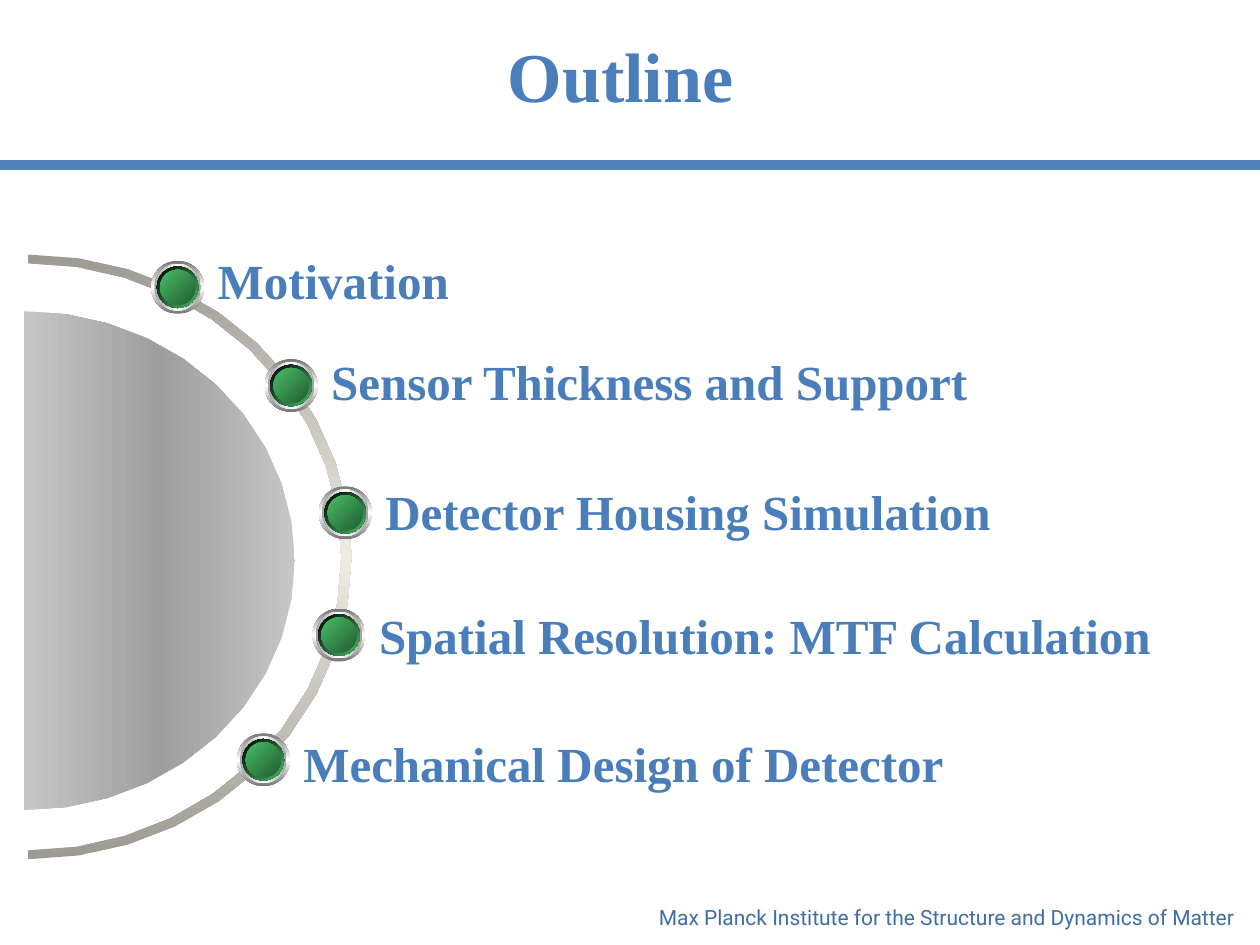
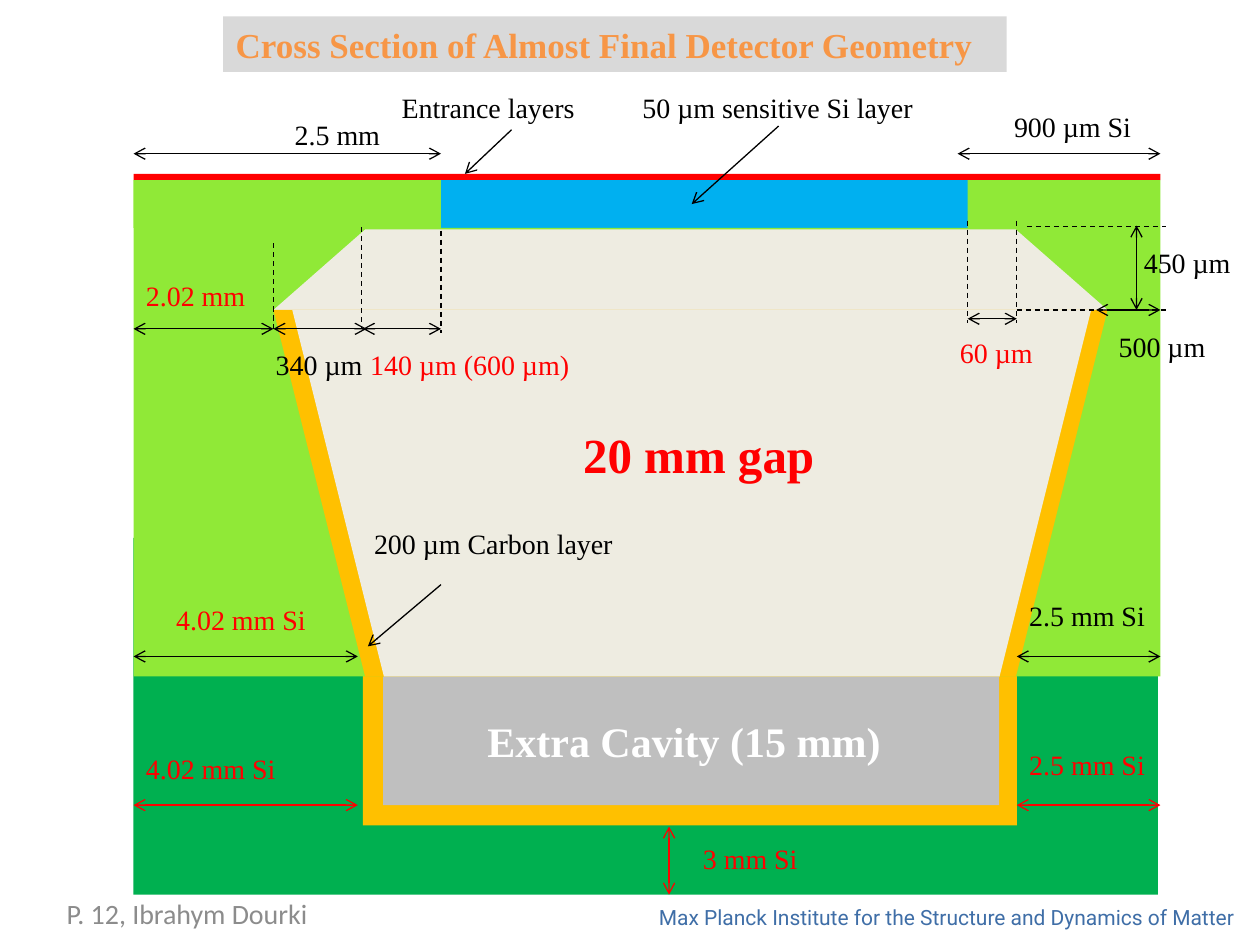
from math import cos, pi, sin

from pptx import Presentation
from pptx.dml.color import RGBColor
from pptx.enum.dml import MSO_LINE
from pptx.enum.shapes import MSO_CONNECTOR, MSO_SHAPE
from pptx.enum.text import MSO_ANCHOR, PP_ALIGN
from pptx.oxml import parse_xml
from pptx.oxml.ns import nsdecls
from pptx.util import Inches, Pt

W, H = 10, 7.5
SERIF = "Times New Roman"
BLUE, BLACK, RED = "4A7EBB", "000000", "FF0000"
LIME, GREEN, GOLD, CREAM = "90E937", "00B050", "FFC000", "EEECE1"
DASH = MSO_LINE.DASH
LINE = MSO_CONNECTOR.STRAIGHT
RECT, OVAL, TRAP = MSO_SHAPE.RECTANGLE, MSO_SHAPE.OVAL, MSO_SHAPE.TRAPEZOID
LEFT, RIGHT, CENTER = PP_ALIGN.LEFT, PP_ALIGN.RIGHT, PP_ALIGN.CENTER
MIDDLE = MSO_ANCHOR.MIDDLE


def write(box, text, size, color, bold=False, font=SERIF, align=LEFT):
    para = box.text_frame.paragraphs[0]
    para.text = text
    para.alignment = align
    face = para.runs[0].font
    face.name, face.size, face.bold = font, Pt(size), bold
    face.color.rgb = RGBColor.from_string(color)


def blend(shape, colors, angle):
    """Fill a shape with evenly spaced gradient stops and no outline."""
    step = 100000 // (len(colors) - 1)
    stops = "".join(f'<a:gs pos="{i * step}"><a:srgbClr val="{c}"/></a:gs>'
                    for i, c in enumerate(colors))
    shape._element.spPr[1].addnext(parse_xml(
        f'<a:gradFill {nsdecls("a")} rotWithShape="1"><a:gsLst>{stops}</a:gsLst>'
        f'<a:lin ang="{angle * 60000}" scaled="0"/></a:gradFill>'))
    shape.line.fill.background()
    shape.shadow.inherit = False


prs = Presentation()
prs.slide_width, prs.slide_height = Inches(W), Inches(H)

# Title and footer of both slides
heads = [
    ("Outline", (2.09, 0.13, 5.67, 0.92), 40, BLUE, CENTER),
    ("Cross Section of Almost Final Detector Geometry",
     (1.77, 0.13, 6.22, 0.44), 20, "F79646", LEFT),
]
for text, (x, y, w, h), size, color, align in heads:
    slide = prs.slides.add_slide(prs.slide_layouts[5])
    title = slide.shapes.title
    title.left, title.top = Inches(x), Inches(y)
    title.width, title.height = Inches(w), Inches(h)
    title.text_frame.vertical_anchor = MIDDLE
    write(title, text, size, color, True, align=align)
    foot = slide.shapes.add_textbox(
        Inches(2.03), Inches(7.13), Inches(7.87), Inches(0.04 * H))
    foot.text_frame.word_wrap = True
    write(foot, "Max Planck Institute for the Structure and Dynamics of Matter",
          12, "3F6EA7", font="Roboto", align=RIGHT)
outline, section = prs.slides

# Outline: rule, half ring and half disc
shapes = outline.shapes
rule = shapes.add_connector(LINE, 0, Inches(1.31), Inches(W), Inches(1.31))
rule.line.color.rgb = RGBColor.from_string("4F81BD")
rule.line.width = Pt(6)
rule._element.spPr.append(parse_xml(f'<a:effectLst {nsdecls("a")}/>'))

STEPS = 20
turns = [pi * i / STEPS - pi / 2 for i in range(STEPS + 1)]
outer, inner, disc = [
    [(Inches(x + rx * cos(t)), Inches(y + ry * sin(t))) for t in turns]
    for x, y, rx, ry in ((0.22, 4.42, 2.57, 2.4), (0.22, 4.42, 2.49, 2.33),
                         (0.19, 4.45, 2.15, 1.98))
]
curves = [
    (outer + inner[::-1], ["9C9A92", CREAM, "9C9A92"], 90),
    (disc, ["C6C6C6", "9E9E9E", "C6C6C6"], 0),
]
for points, colors, angle in curves:
    curve = shapes.build_freeform(*points[0])
    curve.add_line_segments(points[1:], close=True)
    blend(curve.convert_to_shape(), colors, angle)

# Outline: one button and one label per topic, placed by button centre
topics = [
    ("Motivation", 1.41, 2.28, 2.06),
    ("Sensor Thickness and Support", 2.31, 3.06, 5.31),
    ("Detector Housing Simulation", 2.74, 4.07, 5.16),
    ("Spatial Resolution: MTF Calculation", 2.69, 5.04, 6.41),
    ("Mechanical Design of Detector", 2.09, 6.03, 5.33),
]
layers = [
    (0.42, ["767676", "FFFFFF", "767676"], 90),
    (0.37, ["A2A2A2", "FFFFFF", "A2A2A2"], 0),
    (0.33, ["000000", "48BE67"], 45),
    (0.28, ["48BE67", "235C32"], 45),
]
for row, (text, x, y, w) in enumerate(topics):
    button = shapes.add_group_shape()
    for size, colors, angle in layers:
        ring = button.shapes.add_shape(
            OVAL, Inches(x - size / 2), Inches(y - size / 2), Inches(size), Inches(size))
        blend(ring, colors, angle)
    label = shapes.add_textbox(
        Inches(x + 0.22), Inches(y - 0.34 + 0.02 * row), Inches(w), Inches(0.57))
    label.text_frame.word_wrap = False
    write(label, text, 28, BLUE, True)

# Cross section: grid lines of the detector
shapes = section.shapes
EDGE, END = 1.06, 9.21             # outer sides
LIP, SILL = 2.17, 8.79             # widest part of the gap
WALL, FAR = 2.88, 8.07             # cavity walls
PANE, STOP = 3.5, 7.68             # sensitive layer
TOP, ROOF, WAIST, FLOOR, BASE = 1.43, 1.81, 2.46, 5.37, 7.1

title = shapes.title
title.fill.solid()
title.fill.fore_color.rgb = RGBColor.from_string("D9D9D9")

# kind, left, top, right, bottom, colour, rotation
parts = [
    (RECT, EDGE, 4.27, 9.19, BASE, GREEN, 0),
    (RECT, WALL, 4.26, FAR, 6.55, GOLD, 0),
    (RECT, EDGE, 1.38, END, TOP, RED, 0),
    (RECT, 2.09, TOP, 8.15, ROOF, "00B0F0", 0),
    (RECT, STOP, TOP, END, ROOF, LIME, 0),
    (RECT, EDGE, TOP, PANE, ROOF, LIME, 0),
    (RECT, EDGE, ROOF, END, FLOOR, LIME, 0),
    (TRAP, LIP, 1.82, SILL, WAIST, CREAM, 0),
    (TRAP, LIP, WAIST, SILL, FLOOR, GOLD, 180),
    (TRAP, 2.32, WAIST, 8.66, FLOOR, CREAM, 180),
    (RECT, 3.04, FLOOR, 7.93, 6.39, "BFBFBF", 0),
]
for kind, x, y, right, low, color, angle in parts:
    part = shapes.add_shape(kind, Inches(x), Inches(y), Inches(right - x), Inches(low - y))
    part.fill.solid()
    part.fill.fore_color.rgb = RGBColor.from_string(color)
    part.line.fill.background()
    part.shadow.inherit = False
    part.rotation = angle
    if kind == TRAP and not angle:
        part.adjustments[0] = 1.14

# Cross section: dimensions, pointers and dashed guides
spans = [
    (7.6, 1.22, END, 1.22, BLACK), (EDGE, 1.22, PANE, 1.22, BLACK),
    (STOP, 2.53, FAR, 2.53, BLACK), (8.7, WAIST, END, WAIST, BLACK),
    (EDGE, 2.61, LIP, 2.61, BLACK), (LIP, 2.61, 2.91, 2.61, BLACK),
    (WALL, 2.61, PANE, 2.61, BLACK), (9.02, 1.79, 9.02, WAIST, BLACK),
    (EDGE, 5.21, 2.84, 5.21, BLACK), (FAR, 5.21, END, 5.21, BLACK),
    (EDGE, 6.39, 2.84, 6.39, RED), (FAR, 6.39, END, 6.39, RED),
    (5.31, BASE, 5.31, 6.56, RED),
]
hints = [
    (PANE, 4.64, 2.92, 5.13, BLACK), (4.06, 1.03, 3.69, 1.38, BLACK),
    (6.18, 1, 5.49, 1.62, BLACK),
]
guides = [
    (8.15, 1.8, 9.25, 1.8, BLACK), (FAR, WAIST, 9.25, WAIST, BLACK),
    (LIP, 1.93, LIP, 2.61, BLACK), (2.87, 1.8, 2.87, 2.61, BLACK),
    (PANE, 1.83, PANE, 2.64, BLACK), (STOP, 1.75, STOP, 2.56, BLACK),
    (FAR, 1.75, FAR, 2.56, BLACK),
]
for rows, ends in ((spans, ("headEnd", "tailEnd")), (hints, ("tailEnd",)), (guides, ())):
    for *spots, color in rows:
        line = shapes.add_connector(LINE, *[Inches(s) for s in spots])
        line.line.color.rgb = RGBColor.from_string(color)
        line.line.width = Pt(0.75)
        if not ends:
            line.line.dash_style = DASH
        for end in ends:
            line.line._get_or_add_ln().append(
                parse_xml(f'<a:{end} {nsdecls("a")} type="arrow"/>'))
        line._element.spPr.append(parse_xml(f'<a:effectLst {nsdecls("a")}/>'))

# Cross section: labels
labels = [
    ("Entrance layers", 3.09, 0.67, 1.6, BLACK),
    ("50 µm sensitive Si layer", 5, 0.67, 2.38, BLACK),
    ("900 µm Si", 7.95, 0.82, 1.14, BLACK),
    ("2.5 mm", 2.24, 0.88, 0.89, BLACK),
    ("450 µm", 8.98, 1.9, 0.9, BLACK),
    ("2.02 mm", EDGE, 2.16, 1, RED),
    ("340 µm", 2.09, 2.71, 0.9, BLACK),
    ("140 µm (600 µm)", 2.84, 2.71, 1.8, RED),
    ("60 µm", 7.52, 2.61, 0.79, RED),
    ("500 µm", 8.78, 2.56, 0.9, BLACK),
    ("200 µm Carbon layer", 2.87, 4.13, 2.12, BLACK),
    ("4.02 mm Si", 1.3, 4.73, 1.3, RED),
    ("2.5 mm Si", FAR, 4.7, 1.19, BLACK),
    ("4.02 mm Si", EDGE, 5.91, 1.3, RED),
    ("2.5 mm Si", FAR, 5.88, 1.19, RED),
    ("3 mm Si", 5.48, 6.63, 1.02, RED),
]
notes = [(*label, 0.37, 16, False, SERIF) for label in labels] + [
    ("20 mm gap", 4.53, 3.32, 2.16, RED, 0.57, 28, True, SERIF),
    ("Extra Cavity (15 mm)", 3.77, 5.63, 3.35, "FFFFFF", 0.5, 24, True, SERIF),
    ("P. 12, Ibrahym Dourki", 0.43, 7.05, 2.33, "8C8C8C", 0.4, 16, False, "Calibri"),
]
for text, x, y, w, color, h, size, bold, font in notes:
    note = shapes.add_textbox(Inches(x), Inches(y), Inches(w), Inches(h))
    note.text_frame.word_wrap = font != SERIF
    note.text_frame.vertical_anchor = MIDDLE
    write(note, text, size, color, bold, font)

prs.save("out.pptx")
